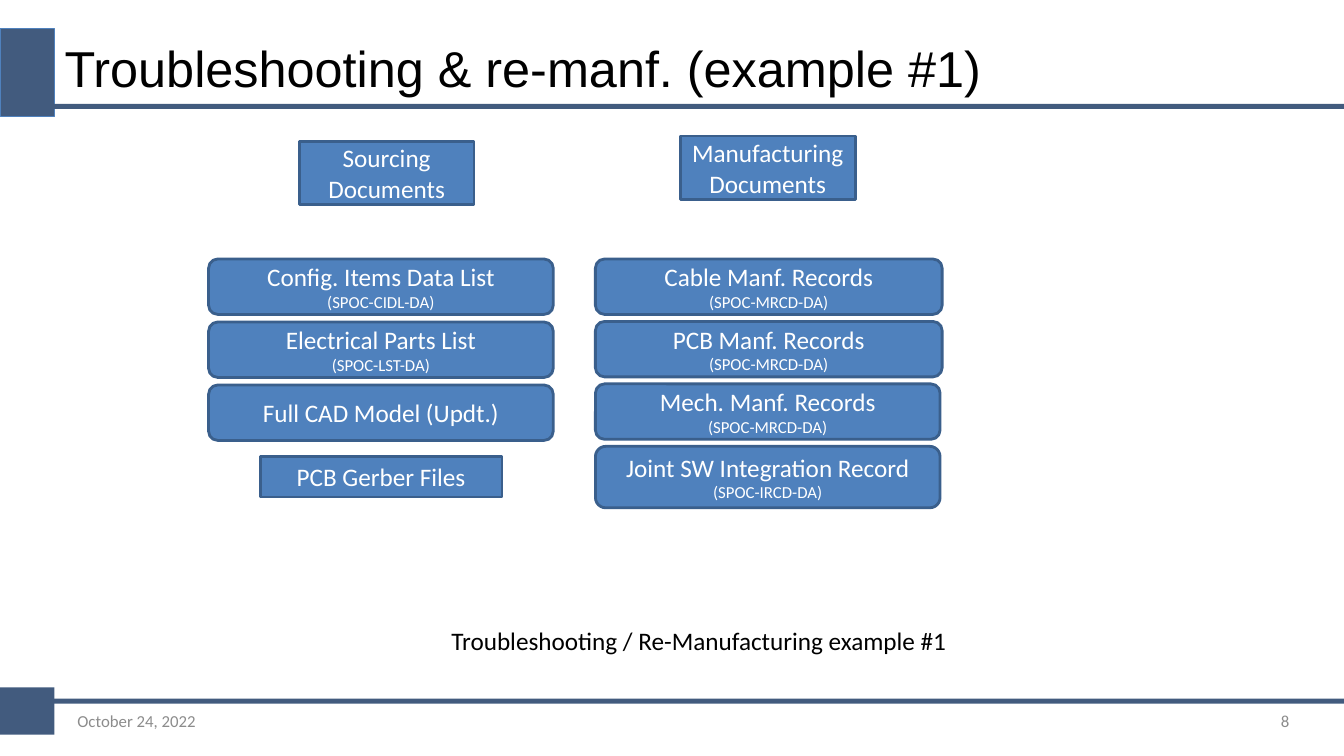
"""Build the troubleshooting and re-manufacturing example slide."""
from pptx import Presentation
from pptx.dml.color import RGBColor
from pptx.enum.shapes import MSO_SHAPE
from pptx.enum.text import MSO_ANCHOR, PP_ALIGN
from pptx.util import Pt

SLATE = RGBColor(0x42, 0x5B, 0x7E)
BLUE = RGBColor(0x4F, 0x81, 0xBD)
EDGE = RGBColor(0x3A, 0x5F, 0x8C)
GREY = RGBColor(0x8C, 0x8C, 0x8C)
BLACK = RGBColor(0, 0, 0)
WHITE = RGBColor(255, 255, 255)

TITLE = "Troubleshooting & re-manf. (example #1)"
HEADERS = [
    ("Sourcing Documents", (213.8, 100.8, 124.8, 45.5)),
    ("Manufacturing Documents", (486, 97.2, 124.8, 45.5)),
]
GERBER = ("PCB Gerber Files", (185.8, 326.2, 172.8, 28.8))
COLUMNS = [
    (149, 45, [
        ("Config. Items Data List", "(SPOC-CIDL-DA)", 246.2, 39.6),
        ("Electrical Parts List", "(SPOC-LST-DA)", 246.2, 39.6),
        ("Full CAD Model (Updt.)", None, 246.2, 39.6),
    ]),
    (425.3, 44.6, [
        ("Cable Manf. Records", "(SPOC-MRCD-DA)", 247.7, 39.6),
        ("PCB Manf. Records", "(SPOC-MRCD-DA)", 247.7, 39.6),
        ("Mech. Manf. Records", "(SPOC-MRCD-DA)", 246.2, 39.6),
        ("Joint SW Integration Record", "(SPOC-IRCD-DA)", 246.2, 43.9),
    ]),
]
COLUMN_TOP = 185
BARS = [
    ((0, 20.6, 38.9, 62.6), BLUE),
    ((26.6, 74.2, 933.4, 3.6), None),
    ((0, 491, 38.9, 33.8), None),
    ((26.6, 499, 933.4, 3.6), None),
]
LABELS = [
    ("October 24, 2022", (48.2, 500.4, 223.9, 28.8), 12, GREY, PP_ALIGN.LEFT, MSO_ANCHOR.MIDDLE, True),
    ("8", (704.2, 500.4, 223.9, 28.8), 12, GREY, PP_ALIGN.RIGHT, MSO_ANCHOR.MIDDLE, True),
    ("Troubleshooting / Re-Manufacturing example #1", (315.4, 442.8, 372.2, 28.8),
     18, BLACK, PP_ALIGN.LEFT, MSO_ANCHOR.TOP, False),
]


def write(sp, lines, color, align, anchor=MSO_ANCHOR.MIDDLE, wrap=True, name="Calibri"):
    tf = sp.text_frame
    for key, value in {"word_wrap": wrap, "vertical_anchor": anchor}.items():
        setattr(tf, key, value)
    for i, (text, size) in enumerate(lines):
        p = tf.add_paragraph() if i else tf.paragraphs[0]
        p.alignment = align
        r = p.add_run()
        r.text = text
        for key, value in {"name": name, "size": Pt(size)}.items():
            setattr(r.font, key, value)
        r.font.color.rgb = color


def add_box(s, kind, box, fill, edge=None, width=0):
    sp = s.shapes.add_shape(kind, *map(Pt, box))
    sp.shadow.inherit = False
    sp.fill.solid()
    sp.fill.fore_color.rgb = fill
    if edge is None:
        sp.line.fill.background()
    else:
        sp.line.color.rgb = edge
        sp.line.width = Pt(width)
    return sp


def add_document(s, kind, box, lines):
    sp = add_box(s, kind, box, BLUE, EDGE, 2)
    write(sp, lines, WHITE, PP_ALIGN.CENTER)


def main():
    prs = Presentation()
    prs.slide_width, prs.slide_height = Pt(960), Pt(540)
    s = prs.slides.add_slide(prs.slide_layouts[5])

    for box, edge in BARS:
        add_box(s, MSO_SHAPE.RECTANGLE, box, SLATE, edge, 0.5)

    title = s.shapes.title
    place = {"left": 38.9, "top": 21.6, "width": 741.6, "height": 52.6}
    for key, value in place.items():
        setattr(title, key, Pt(value))
    write(title, [(TITLE, 36)], BLACK, PP_ALIGN.LEFT, name="Arial")

    for text, box, size, color, align, anchor, wrap in LABELS:
        sp = s.shapes.add_textbox(*map(Pt, box))
        write(sp, [(text, size)], color, align, anchor, wrap)

    for text, box in HEADERS + [GERBER]:
        add_document(s, MSO_SHAPE.FLOWCHART_PROCESS, box, [(text, 18)])

    for left, pitch, documents in COLUMNS:
        for row, (name, code, width, height) in enumerate(documents):
            lines = [(name, 18)] + ([(code, 12)] if code else [])
            box = (left, COLUMN_TOP + row * pitch, width, height)
            add_document(s, MSO_SHAPE.FLOWCHART_ALTERNATE_PROCESS, box, lines)

    prs.save("out.pptx")


if __name__ == "__main__":
    main()
